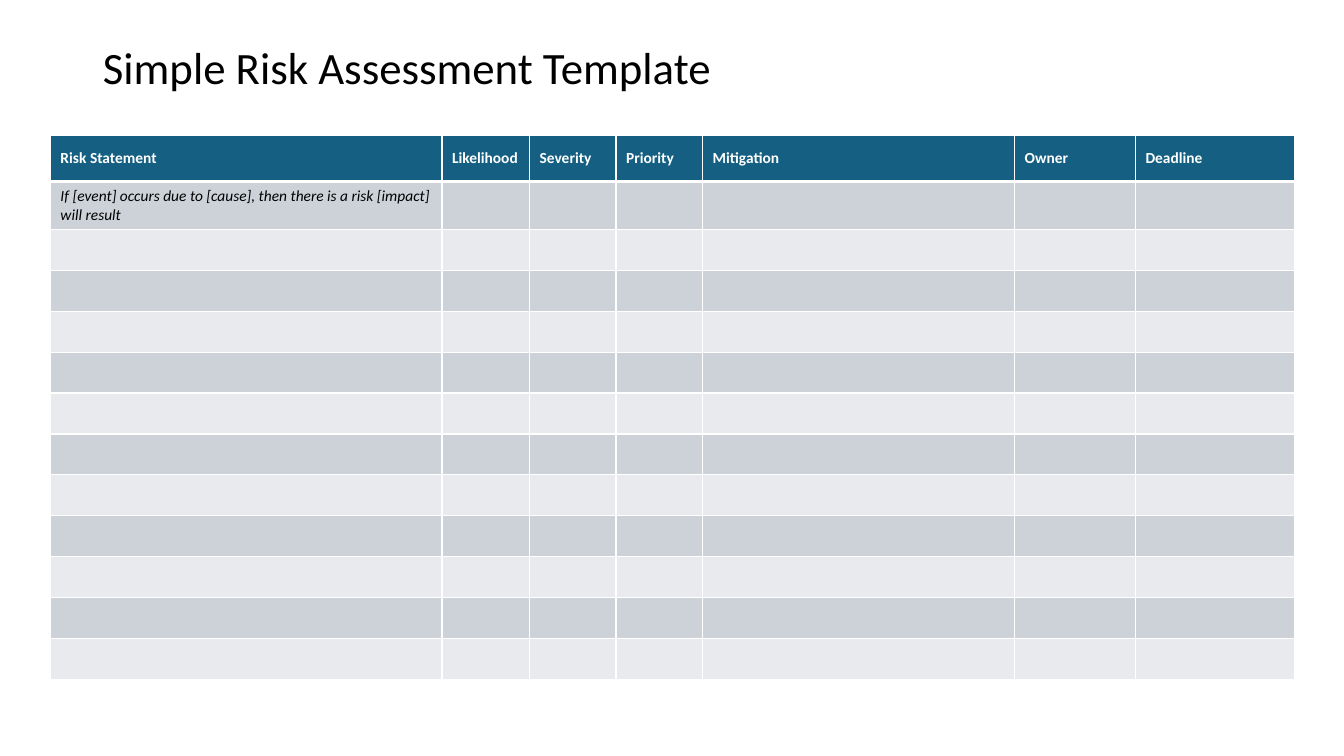
from dataclasses import dataclass

from lxml import etree
from pptx import Presentation
from pptx import util as u
from pptx.dml.color import RGBColor
from pptx.enum import text
from pptx.oxml.ns import qn


@dataclass(frozen=True)
class Theme:
    font: str = "Calibri"
    title_size: float = 32
    table_size: float = 11
    ink: str = "000000"
    paper: str = "FFFFFF"
    header: str = "156082"
    bands: tuple = ("CCD2D8", "E8EAED")
    rule: float = 1
    header_rule: float = 3


THEME = Theme()
SLIDE_SIZE = (13.33, 7.5)
TITLE_BOX = (0.92, 0.4, 11.55, 0.58)
REGISTER_BOX = (0.5, 1.34, 12.34, 5.33)
HEADER_HEIGHT = 0.46
RISK_ROWS = 12
COLUMNS = {
    "Risk Statement": 3.89,
    "Likelihood": 0.87,
    "Severity": 0.86,
    "Priority": 0.86,
    "Mitigation": 3.1,
    "Owner": 1.2,
    "Deadline": 1.58,
}
EXAMPLE_RISK = "If [event] occurs due to [cause], then there is a risk [impact] will result"


def style_text(frame, size, color, bold=False, italic=False):
    for paragraph in frame.paragraphs:
        for run in paragraph.runs:
            font = run.font
            font.name, font.size = THEME.font, u.Pt(size)
            font.bold, font.italic = bold, italic
            font.color.rgb = RGBColor.from_string(color)


def add_title(slide, box, wording):
    title = slide.shapes.title
    title.left, title.top, title.width, title.height = map(u.Inches, box)
    frame = title.text_frame
    frame.text = wording
    frame.auto_size = text.MSO_AUTO_SIZE.NONE
    frame.vertical_anchor = text.MSO_ANCHOR.MIDDLE
    frame.paragraphs[0].alignment = text.PP_ALIGN.LEFT
    frame.paragraphs[0].line_spacing = 0.9
    style_text(frame, THEME.title_size, THEME.ink)


def format_cell(cell, fill, top, bottom):
    """Rule the cell first, then fill it, as the XML schema orders them."""
    cell.vertical_anchor = text.MSO_ANCHOR.MIDDLE
    properties = cell._tc.get_or_add_tcPr()
    rules = {"lnL": THEME.rule, "lnR": THEME.rule, "lnT": top, "lnB": bottom}
    for side, width in rules.items():
        line = etree.SubElement(properties, qn(f"a:{side}"), w=str(u.Pt(width)))
        solid = etree.SubElement(line, qn("a:solidFill"))
        etree.SubElement(solid, qn("a:srgbClr"), val=THEME.paper)
    cell.fill.solid()
    cell.fill.fore_color.rgb = RGBColor.from_string(fill)


def add_risk_register(slide, box):
    left, top, width, height = map(u.Inches, box)
    register = slide.shapes.add_table(
        RISK_ROWS + 1, len(COLUMNS), left, top, width, height
    ).table

    total = sum(COLUMNS.values())
    for column, share in zip(register.columns, COLUMNS.values()):
        column.width = int(width * share / total)

    header_height = u.Inches(HEADER_HEIGHT)
    for index, row in enumerate(register.rows):
        is_header = index == 0
        row.height = header_height if is_header else (height - header_height) // RISK_ROWS
        fill = THEME.header if is_header else THEME.bands[(index - 1) % 2]
        above = THEME.header_rule if index == 1 else THEME.rule
        below = THEME.header_rule if is_header else THEME.rule
        for cell in row.cells:
            format_cell(cell, fill, above, below)

    for cell, heading in zip(register.rows[0].cells, COLUMNS):
        cell.text_frame.text = heading
        style_text(cell.text_frame, THEME.table_size, THEME.paper, bold=True)
    example = register.cell(1, 0).text_frame
    example.text = EXAMPLE_RISK
    style_text(example, THEME.table_size, THEME.ink, italic=True)


def main():
    deck = Presentation()
    deck.slide_width, deck.slide_height = map(u.Inches, SLIDE_SIZE)
    slide = deck.slides.add_slide(deck.slide_layouts.get_by_name("Title Only"))
    add_title(slide, TITLE_BOX, "Simple Risk Assessment Template")
    add_risk_register(slide, REGISTER_BOX)
    deck.save("out.pptx")


if __name__ == "__main__":
    main()
